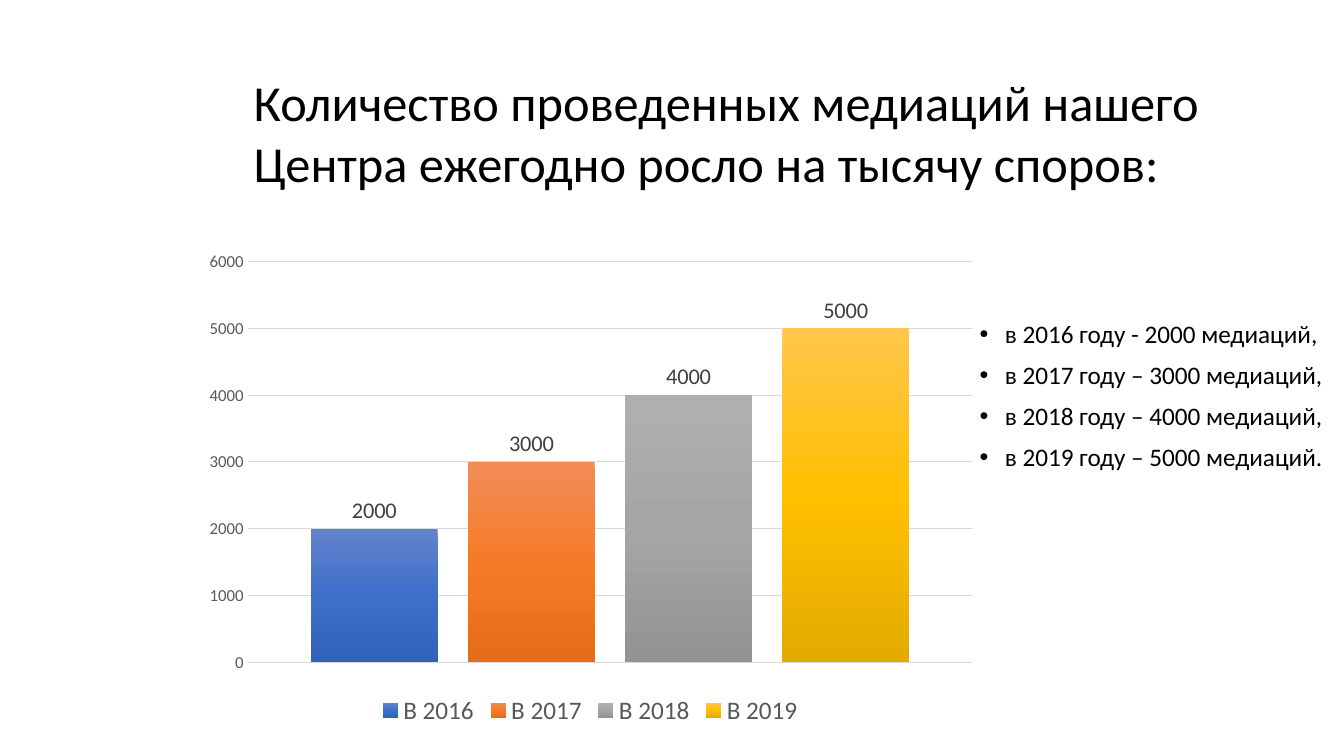
import copy
import pptx
import pptx.chart.data
import pptx.dml.color
import pptx.enum.chart
import pptx.enum.text
import pptx.oxml
import pptx.oxml.ns
import pptx.util

Pt = pptx.util.Pt
qn = pptx.oxml.ns.qn
rgb = pptx.dml.color.RGBColor.from_string

THEME = {
    "font": "Calibri",
    "text": "000000", "axis": "595959", "label": "404040", "grid": "D9D9D9",
    "title_size": 36, "body_size": 18, "axis_size": 12, "label_size": 16, "legend_size": 18,
    "bars": [
        ("6183CB", "3E70CA", "3062BB"),
        ("F18C57", "F67B28", "E56C19"),
        ("AFAFAF", "A5A5A5", "939393"),
        ("FFC64B", "FFC000", "E3AB00"),
    ],
}


def style_font(font, size, color):
    font.name = THEME["font"]
    font.size = Pt(size)
    font.color.rgb = rgb(color)


def write_text(para, text, size, color=THEME["text"], line_spacing=1.0, space_before=0, hanging=0):
    para.alignment = pptx.enum.text.PP_ALIGN.LEFT
    para.line_spacing = line_spacing
    para.space_before = Pt(space_before)
    if hanging:
        properties = para._p.get_or_add_pPr()
        properties.set("marL", str(Pt(hanging)))
        properties.set("indent", str(-Pt(hanging)))
        bullet = pptx.oxml.parse_xml(
            f'<a:buChar {pptx.oxml.ns.nsdecls("a")} char="•"/>')
        properties.append(bullet)
    span = para.add_run()
    span.text = text
    style_font(span.font, size, color)


deck = pptx.Presentation()
deck.slide_width, deck.slide_height = Pt(960), Pt(540)
page = deck.slides.add_slide(deck.slide_layouts[1])
title, body = page.shapes.title, page.placeholders[1]

# Placeholder positions
for box, (left, top, width, height) in (
    (title, (174, 47.5, 710, 94.5)),
    (body, (692.5, 226, 267.5, 178)),
):
    box.left, box.top, box.width, box.height = Pt(left), Pt(top), Pt(width), Pt(height)
    box.text_frame.word_wrap = True
    box.text_frame.auto_size = pptx.enum.text.MSO_AUTO_SIZE.NONE
    box.text_frame.vertical_anchor = pptx.enum.text.MSO_ANCHOR.TOP

# Title
write_text(title.text_frame.paragraphs[0],
           "Количество проведенных медиаций нашего Центра ежегодно росло на тысячу споров:",
           size=THEME["title_size"])

# Yearly list
lines = [
    "в 2016 году - 2000 медиаций,",
    "в 2017 году – 3000 медиаций,",
    "в 2018 году – 4000 медиаций,",
    "в 2019 году – 5000 медиаций.",
]
for index, line in enumerate(lines):
    para = body.text_frame.add_paragraph() if index else body.text_frame.paragraphs[0]
    write_text(para, line, size=THEME["body_size"], line_spacing=0.9,
               space_before=10 if index else 0, hanging=18)

# Column chart
data = pptx.chart.data.CategoryChartData()
data.categories = ["1"]
for year, count in zip(range(2016, 2020), range(2000, 6000, 1000)):
    data.add_series(f"В {year}", [count])
chart = page.shapes.add_chart(
    pptx.enum.chart.XL_CHART_TYPE.COLUMN_CLUSTERED,
    Pt(137), Pt(173), Pt(569), Pt(349), data).chart
chart.has_title = False
style_font(chart.font, 10, THEME["text"])

# Plot area position inside the chart
plot_area = chart._chartSpace.chart.plotArea
for old_layout in plot_area.findall(qn("c:layout")):
    plot_area.remove(old_layout)
plot_area.insert(0, pptx.oxml.parse_xml(
    f'<c:layout {pptx.oxml.ns.nsdecls("c")}><c:manualLayout><c:layoutTarget val="inner"/>'
    '<c:xMode val="edge"/><c:yMode val="edge"/><c:x val="0.07"/><c:y val="0.04"/>'
    '<c:w val="0.91"/><c:h val="0.82"/></c:manualLayout></c:layout>'))

# Axes and legend
chart.category_axis.visible = False
axis = chart.value_axis
axis.minimum_scale, axis.maximum_scale, axis.major_unit = 0, 6000, 1000
axis.major_tick_mark = pptx.enum.chart.XL_TICK_MARK.NONE
axis.format.line.fill.background()
axis.major_gridlines.format.line.width = Pt(0.75)
axis.major_gridlines.format.line.color.rgb = rgb(THEME["grid"])
style_font(axis.tick_labels.font, THEME["axis_size"], THEME["axis"])
chart.has_legend = True
chart.legend.position = pptx.enum.chart.XL_LEGEND_POSITION.BOTTOM
chart.legend.include_in_layout = False
style_font(chart.legend.font, THEME["legend_size"], THEME["axis"])

# Bars with three-stop gradients and value labels
plot = chart.plots[0]
plot.gap_width, plot.overlap, plot.vary_by_categories = 100, -24, False
for series, colors in zip(plot.series, THEME["bars"]):
    fill = series.format.fill
    fill.gradient()
    fill.gradient_angle = 270
    stop_list = series._element.find(".//" + qn("a:gsLst"))
    stop_list.append(copy.deepcopy(stop_list[-1]))
    for stop, color, position in zip(fill.gradient_stops, colors, (0, 0.5, 1)):
        stop.color.rgb = rgb(color)
        stop.position = position
    labels = series.data_labels
    labels.show_value = True
    labels.position = pptx.enum.chart.XL_LABEL_POSITION.OUTSIDE_END
    style_font(labels.font, THEME["label_size"], THEME["label"])

deck.save("out.pptx")
